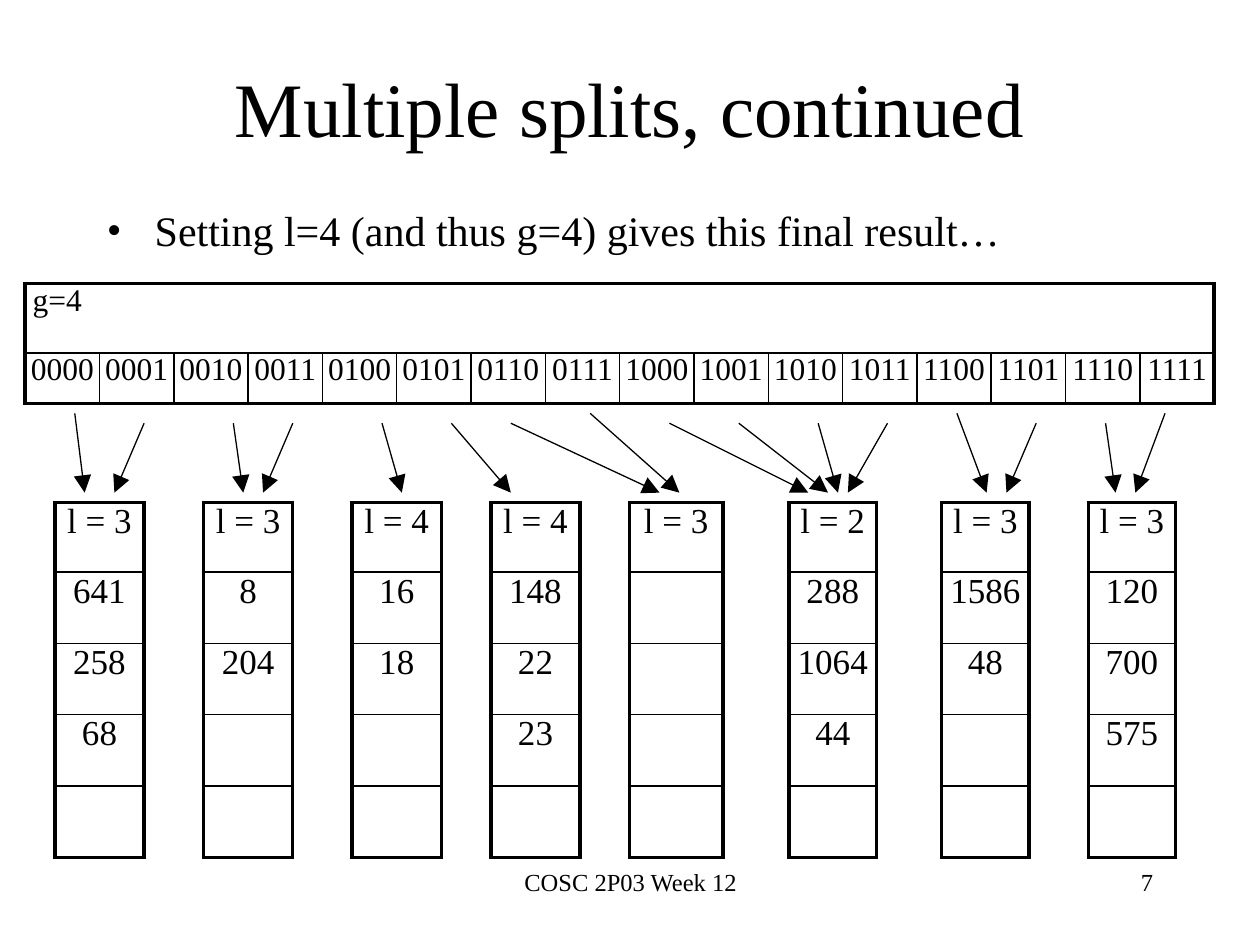
from lxml.etree import SubElement
from pptx import Presentation
from pptx.dml.color import RGBColor
from pptx.enum.shapes import MSO_CONNECTOR
from pptx.enum.text import MSO_ANCHOR, PP_ALIGN
from pptx.oxml.ns import qn
from pptx.util import Inches, Pt

COLORS = {"ink": "000000", "paper": "FFFFFF"}
FONT = "Times New Roman"
NO_STYLE = "{2D5ABB26-0587-4C30-8999-92F81FD0307C}"
THICK, THIN = 2.25, 1


def write(paragraph, text, size, alignment):
    paragraph.alignment = alignment
    run = paragraph.add_run()
    run.text = text
    run.font.name = FONT
    run.font.size = Pt(size)
    run.font.color.rgb = RGBColor.from_string(COLORS["ink"])


def set_borders(cell, **widths):
    properties = cell._tc.get_or_add_tcPr()
    for position, side in enumerate(side for side in "LRTB" if side in widths):
        line = properties.makeelement(qn(f"a:ln{side}"), {"w": str(Pt(widths[side]))})
        fill = SubElement(line, qn("a:solidFill"))
        SubElement(fill, qn("a:srgbClr"), val=COLORS["ink"])
        properties.insert(position, line)


presentation = Presentation()
presentation.slide_width = Inches(10)
presentation.slide_height = Inches(7.5)
width, height = presentation.slide_width, presentation.slide_height
slide = presentation.slides.add_slide(presentation.slide_layouts[6])
slide.background.fill.solid()
slide.background.fill.fore_color.rgb = RGBColor.from_string(COLORS["paper"])

texts = [
    ("COSC 2P03 Week 12", 14, PP_ALIGN.CENTER, MSO_ANCHOR.TOP, (34.2, 91.1, 31.7, 6.7)),
    ("7", 14, PP_ALIGN.RIGHT, MSO_ANCHOR.TOP, (71.7, 91.1, 20.8, 6.7)),
    ("Multiple splits, continued", 44, PP_ALIGN.CENTER, MSO_ANCHOR.MIDDLE, (7.5, 5, 85, 12.5)),
    ("Setting l=4 (and thus g=4) gives this final result…", 24, PP_ALIGN.LEFT, MSO_ANCHOR.TOP,
     (7.5, 21.6, 85, 7.5)),
]
for text, size, alignment, anchor, percentages in texts:
    left, top, wide, high = (percentage / 100 for percentage in percentages)
    box = slide.shapes.add_textbox(
        int(left * width), int(top * height), int(wide * width), int(high * height))
    box.text_frame.word_wrap = True
    box.text_frame.vertical_anchor = anchor
    write(box.text_frame.paragraphs[0], text, size, alignment)

bullet_paragraph = box.text_frame.paragraphs[0]
bullet_paragraph.line_spacing = 0.9
bullet_properties = bullet_paragraph._p.get_or_add_pPr()
bullet_properties.set("marL", str(Inches(0.38)))
bullet_properties.set("indent", str(-Inches(0.38)))
SubElement(bullet_properties, qn("a:buFont"), typeface=FONT)
SubElement(bullet_properties, qn("a:buChar"), char="•")

unit = width * 0.944 / 120
grid_left, grid_top = 0.02 * width, 0.3 * height

directory_columns = [7.5] * 16
bucket_columns = [9, 6, 9, 6, 9, 5, 9, 5, 9.4, 6.7, 8.8, 6.6, 8.8, 6, 8.8]
buckets = [
    ["l = 3", "641", "258", "68", ""],
    ["l = 3", "8", "204", "", ""],
    ["l = 4", "16", "18", "", ""],
    ["l = 4", "148", "22", "23", ""],
    ["l = 3", "", "", "", ""],
    ["l = 2", "288", "1064", "44", ""],
    ["l = 3", "1586", "48", "", ""],
    ["l = 3", "120", "700", "575", ""],
]
tables = []
for column, row, columns, rows in [
    (0, 0, directory_columns, [7, 5.1]),
    (3, 22.1, bucket_columns, [7] + [7.2] * 4),
]:
    frame = slide.shapes.add_table(
        len(rows), len(columns), int(grid_left + column * unit), int(grid_top + row * unit),
        int(sum(columns) * unit), int(sum(rows) * unit))
    table = frame.table
    table.first_row = table.horz_banding = False
    for style in frame._element.iter(qn("a:tableStyleId")):
        style.text = NO_STYLE
    for table_column, share in zip(table.columns, columns):
        table_column.width = int(share * unit)
    for table_row, share in zip(table.rows, rows):
        table_row.height = int(share * unit)
    for cell in table.iter_cells():
        cell.fill.background()
        cell.margin_left = cell.margin_right = Inches(0.02)
        cell.margin_top = cell.margin_bottom = 0
    tables.append(table)
directory, bucket_table = tables

last = len(directory_columns) - 1
for index in range(last + 1):
    left = {"L": THICK if index == 0 else THIN}
    right = {"R": THICK if index == last else THIN}
    heading_sides = (left if index == 0 else {}) | (right if index == last else {})
    set_borders(directory.cell(0, index), T=THICK, B=THIN, **heading_sides)
    key = directory.cell(1, index)
    set_borders(key, T=THIN, B=THICK, **left, **right)
    write(key.text_frame.paragraphs[0], f"{index:04b}", 18, PP_ALIGN.CENTER)
heading = directory.cell(0, 0)
heading.margin_left = Inches(0.06)
write(heading.text_frame.paragraphs[0], "g=4", 18, PP_ALIGN.LEFT)

for index, bucket in enumerate(buckets):
    for row, value in enumerate(bucket):
        cell = bucket_table.cell(row, 2 * index)
        set_borders(cell, L=THICK, R=THICK, T=THICK if row == 0 else THIN,
                    B=THICK if row == len(bucket) - 1 else THIN)
        if value:
            write(cell.text_frame.paragraphs[0], value, 20, PP_ALIGN.CENTER)
        if index < len(buckets) - 1:
            set_borders(bucket_table.cell(row, 2 * index + 1), L=THICK, R=THICK)

pointers = [
    (5, 6), (12, 9), (21, 22), (27, 24), (36, 38), (43, 49), (49, 64), (57, 66),
    (65, 79), (72, 81), (80, 82), (87, 83), (94, 97), (102, 99), (109, 110), (115, 112),
]
raised_keys = {0b0000, 0b0111, 0b1100, 0b1111}
for key, (start, end) in enumerate(pointers):
    start_row = 13.1 if key in raised_keys else 14.1
    arrow = slide.shapes.add_connector(
        MSO_CONNECTOR.STRAIGHT,
        int(grid_left + start * unit), int(grid_top + start_row * unit),
        int(grid_left + end * unit), int(grid_top + 21.1 * unit))
    arrow.line.width = Pt(0.75)
    arrow.line.color.rgb = RGBColor.from_string(COLORS["ink"])
    SubElement(arrow.line._get_or_add_ln(), qn("a:tailEnd"), type="triangle", w="lg", len="lg")
    SubElement(arrow._element.spPr, qn("a:effectLst"))

presentation.save("out.pptx")
